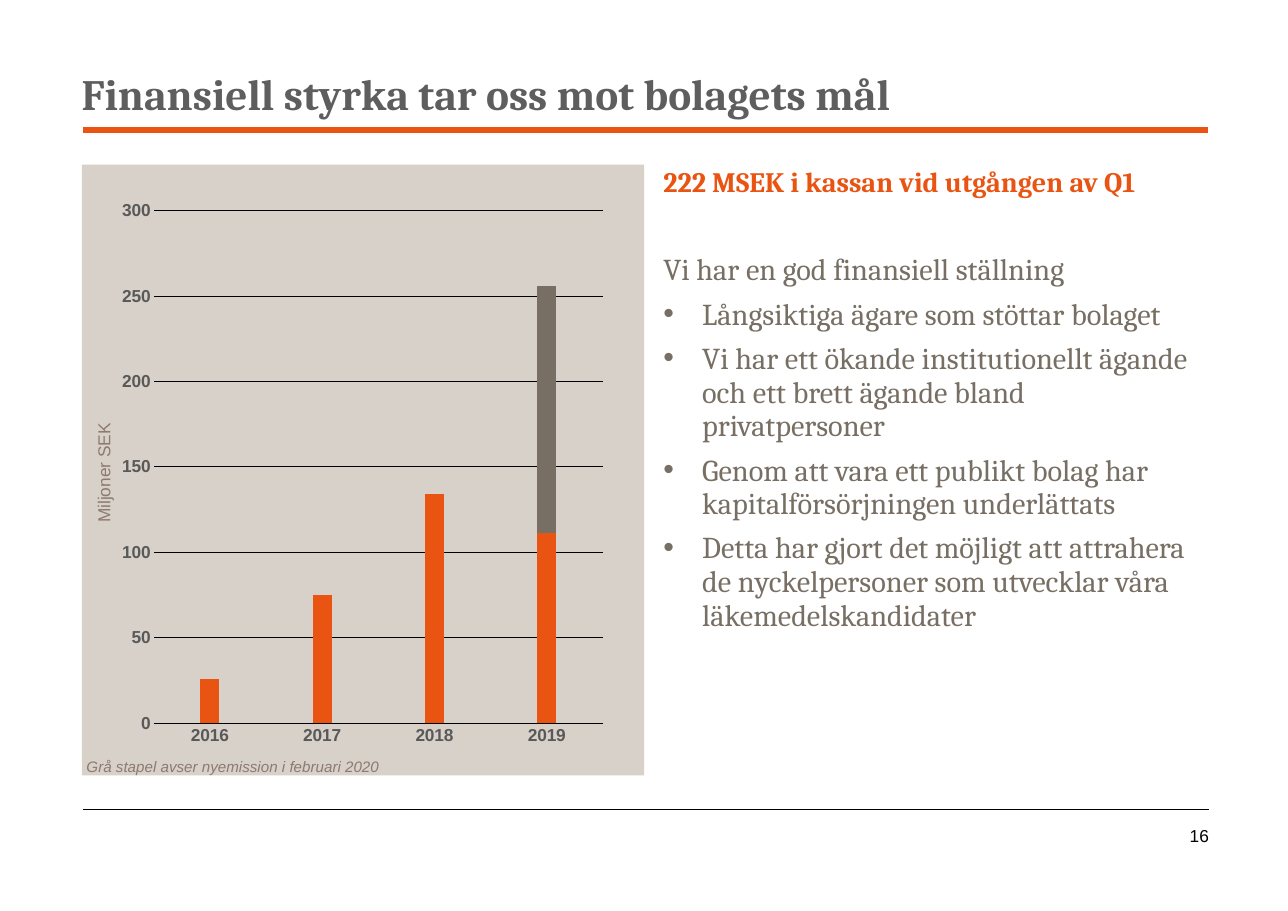
from lxml import etree
from pptx import Presentation
from pptx.chart.data import CategoryChartData
from pptx.dml.color import RGBColor
from pptx.enum.chart import XL_CHART_TYPE, XL_TICK_MARK
from pptx.enum.shapes import MSO_CONNECTOR, MSO_SHAPE
from pptx.enum.text import MSO_ANCHOR, PP_ALIGN
from pptx.oxml import parse_xml
from pptx.oxml.ns import nsdecls, qn
from pptx.util import Cm, Pt

STACKED = XL_CHART_TYPE.COLUMN_STACKED
NO_TICK = XL_TICK_MARK.NONE
STRAIGHT = MSO_CONNECTOR.STRAIGHT
RECTANGLE = MSO_SHAPE.RECTANGLE
TOP, MIDDLE, BOTTOM = MSO_ANCHOR.TOP, MSO_ANCHOR.MIDDLE, MSO_ANCHOR.BOTTOM
LEFT, CENTER, RIGHT = PP_ALIGN.LEFT, PP_ALIGN.CENTER, PP_ALIGN.RIGHT

ORANGE, GREY, BLACK = "E95412", "776E64", "000000"
CAPTION, BODY = "8D7A71", "786F64"
CASH = (26, 75, 134, 111)
NEW_ISSUE = (None, None, None, 145)
YEARS = ("2016", "2017", "2018", "2019")
HEADING = "222 MSEK i kassan vid utgången av Q1"
INTRO = "Vi har en god finansiell ställning"
REASONS = (
    "Långsiktiga ägare som stöttar bolaget",
    "Vi har ett ökande institutionellt ägande och ett brett ägande bland privatpersoner",
    "Genom att vara ett publikt bolag har kapitalförsörjningen underlättats",
    "Detta har gjort det möjligt att attrahera de nyckelpersoner som utvecklar våra läkemedelskandidater",
)


def rgb(value):
    """Return the colour for a hex string."""
    return RGBColor.from_string(value)


def style(font, size, color, name="Arial", bold=False, italic=False):
    """Set all the properties of a font."""
    font.size, font.name, font.bold, font.italic = Pt(size), name, bold, italic
    font.color.rgb = rgb(color)


def add_frame(slide, left, top, width, height, anchor=TOP):
    """Add a wrapping text box without margins."""
    box = slide.shapes.add_textbox(Cm(left), Cm(top), Cm(width), Cm(height))
    frame = box.text_frame
    frame.word_wrap = True
    frame.vertical_anchor = anchor
    frame.margin_left = frame.margin_right = frame.margin_top = frame.margin_bottom = 0
    return box


def add_label(slide, box, text, size, color, align=LEFT, anchor=TOP, **font):
    """Add a single paragraph of text."""
    label = add_frame(slide, *box, anchor)
    label.text_frame.text = text
    paragraph = label.text_frame.paragraphs[0]
    paragraph.alignment = align
    style(paragraph.runs[0].font, size, color, **font)
    return label


def add_rule(slide, left, top, width, color, weight):
    """Draw a horizontal rule."""
    rule = slide.shapes.add_connector(STRAIGHT, Cm(left), Cm(top), Cm(left + width), Cm(top))
    rule.line.color.rgb = rgb(color)
    rule.line.width = Pt(weight)
    etree.SubElement(rule._element.spPr, qn("a:effectLst"))


def add_header(slide, left, top, width, height):
    """Place the title above its orange rule."""
    title = add_label(slide, (left, top, width, height), "Finansiell styrka tar oss mot bolagets mål",
                      40, "5F5E5E", anchor=BOTTOM, name="Cambria", bold=True)
    title.text_frame.paragraphs[0].line_spacing = 0.9
    add_rule(slide, left + 0.04, top + height + 0.33, width, ORANGE, 5)


def add_footer(slide, left, top, width, height):
    """Place the thin rule and the page number."""
    add_rule(slide, left + 0.04, top, width, BLACK, 1)
    add_label(slide, (left + width - 2.5, top + 0.07, 2.55, height), "16", 16, BLACK, RIGHT, MIDDLE)


def add_cash_chart(slide, left, top, width, height):
    """Chart the cash per year with the new issue on top."""
    data = CategoryChartData()
    data.categories = YEARS
    data.add_series("Series 1", NEW_ISSUE)
    data.add_series("Series 2", CASH)
    chart = slide.shapes.add_chart(STACKED, Cm(left), Cm(top), Cm(width), Cm(height), data).chart
    chart.has_legend = chart.has_title = False
    style(chart.font, 10, BLACK)

    plot = chart.plots[0]
    plot.gap_width, plot.overlap, plot.vary_by_categories = 500, 100, False
    new_issue, cash = plot.series
    for series, color in ((new_issue, GREY), (cash, ORANGE)):
        series.format.fill.solid()
        series.format.fill.fore_color.rgb = rgb(color)
    cash._element.addnext(new_issue._element)

    years, amounts = chart.category_axis, chart.value_axis
    for axis in (years, amounts):
        axis.major_tick_mark = axis.minor_tick_mark = NO_TICK
        style(axis.tick_labels.font, 16, "595959", bold=True)
    amounts.minimum_scale, amounts.maximum_scale, amounts.major_unit = 0, 300, 50
    amounts.format.line.fill.background()
    for line in (years.format.line, amounts.major_gridlines.format.line):
        line.color.rgb = rgb(BLACK)
        line.width = Pt(0.75)

    area = chart._chartSpace.chart.plotArea
    for layout in area.findall(qn("c:layout")):
        area.remove(layout)
    area.insert(0, parse_xml(
        f'<c:layout {nsdecls("c")}><c:manualLayout><c:layoutTarget val="inner"/>'
        '<c:xMode val="edge"/><c:yMode val="edge"/><c:x val="0.08"/><c:y val="0.04"/>'
        '<c:w val="0.9"/><c:h val="0.91"/></c:manualLayout></c:layout>'))


def add_cash_panel(slide, left, top, width, height):
    """Place the chart, its axis title and its note on a beige panel."""
    panel = slide.shapes.add_shape(RECTANGLE, Cm(left), Cm(top), Cm(width), Cm(height))
    panel.shadow.inherit = False
    panel.fill.solid()
    panel.fill.fore_color.rgb = rgb("D7D1C9")
    panel.line.fill.background()
    add_cash_chart(slide, left + 1.04, top + 0.76, width - 2.06, height - 1.55)
    unit = add_label(slide, (left - 1.7, top + 9.49, 5.26, 1.12), "Miljoner SEK", 16, CAPTION, CENTER)
    unit.rotation = 270
    add_label(slide, (left + 0.15, top + height - 0.58, width - 1.3, 1.32),
              "Grå stapel avser nyemission i februari 2020", 14, CAPTION, italic=True)


def add_reasons(slide, left, top, width, height):
    """Write the heading, the introduction and the bulleted reasons."""
    frame = add_frame(slide, left, top, width, height).text_frame
    frame.text = "\n".join((HEADING, INTRO, *REASONS))
    for index, paragraph in enumerate(frame.paragraphs):
        paragraph.line_spacing = Pt(31)
        paragraph.space_before = Pt((0, 46)[index] if index < 2 else 5)
        paragraph.space_after = Pt(5)
        if index > 1:
            properties = paragraph._p.get_or_add_pPr()
            properties.set("marL", str(Cm(1.27)))
            properties.set("indent", str(-Cm(1.27)))
            etree.SubElement(properties, qn("a:buFont"), typeface="Arial")
            etree.SubElement(properties, qn("a:buChar"), char="•")
        is_heading = index == 0
        style(paragraph.runs[0].font, 26 if is_heading else 28,
              ORANGE if is_heading else BODY, "Cambria", is_heading)


def main():
    """Build the slide and save it."""
    deck = Presentation()
    deck.slide_width, deck.slide_height = Cm(42), Cm(29.7)
    slide = deck.slides.add_slide(deck.slide_layouts[6])
    add_header(slide, 2.66, 0.46, 36.7, 3.45)
    add_cash_panel(slide, 2.67, 5.37, 18.34, 19.91)
    add_reasons(slide, 21.63, 5.37, 17.73, 20.07)
    add_footer(slide, 2.67, 26.39, 36.7, 1.57)
    deck.save("out.pptx")


if __name__ == "__main__":
    main()
